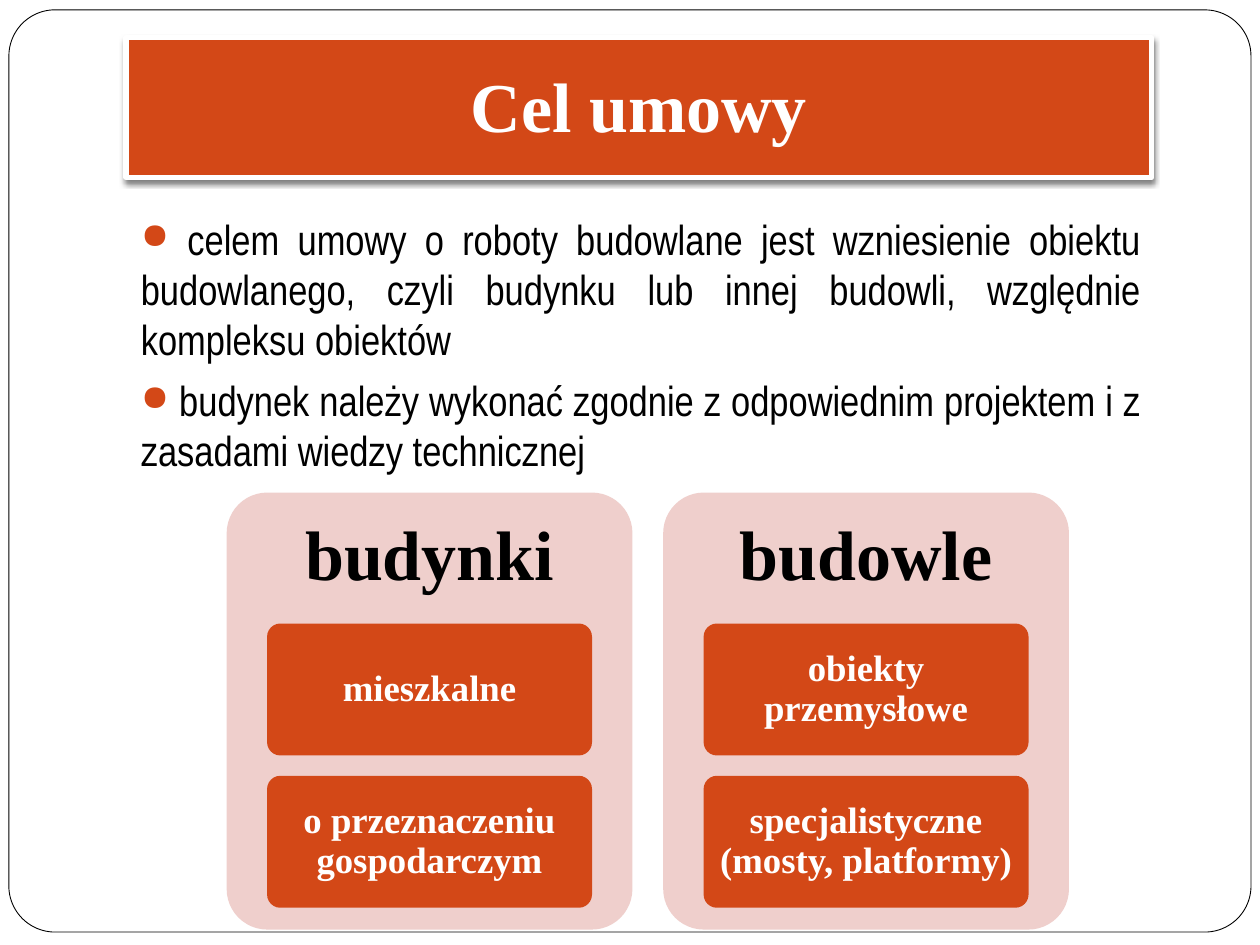
from dataclasses import dataclass

from lxml import etree
from pptx import Presentation
from pptx.dml.color import RGBColor
from pptx.enum.shapes import MSO_SHAPE
from pptx.enum.text import MSO_ANCHOR, PP_ALIGN
from pptx.oxml.ns import qn
from pptx.util import Cm, Pt

RECTANGLE = MSO_SHAPE.RECTANGLE
ROUNDED = MSO_SHAPE.ROUNDED_RECTANGLE
MIDDLE = MSO_ANCHOR.MIDDLE
CENTER = PP_ALIGN.CENTER
JUSTIFY = PP_ALIGN.JUSTIFY


@dataclass(frozen=True)
class Theme:
    accent: str = "D34817"
    panel: str = "EFCFCC"
    white: str = "FFFFFF"
    black: str = "000000"
    heading_font: str = "Times New Roman"
    body_font: str = "Arial Narrow"
    heading_size: float = 40
    body_size: float = 24
    card_size: float = 21


THEME = Theme()

BODY = [
    " celem umowy o roboty budowlane jest wzniesienie obiektu budowlanego, "
    "czyli budynku lub innej budowli, względnie kompleksu obiektów",
    " budynek należy wykonać zgodnie z odpowiednim projektem i z zasadami "
    "wiedzy technicznej",
]
GROUPS = {
    "budynki": ["mieszkalne", "o przeznaczeniu gospodarczym"],
    "budowle": ["obiekty przemysłowe", "specjalistyczne (mosty, platformy)"],
}


def style_font(paragraph, name, size, color, bold=False):
    font = paragraph.font
    font.name = name
    font.size = Pt(size)
    font.bold = bold
    font.color.rgb = RGBColor.from_string(color)


def set_margins(frame, left, top, right, bottom):
    frame.margin_left, frame.margin_top = Cm(left), Cm(top)
    frame.margin_right, frame.margin_bottom = Cm(right), Cm(bottom)


def add_box(slide, kind, box, fill, line=None, line_width=0, corner=None):
    shape = slide.shapes.add_shape(kind, *(Cm(value) for value in box))
    shape.shadow.inherit = False
    shape.fill.solid()
    shape.fill.fore_color.rgb = RGBColor.from_string(fill)
    if line:
        shape.line.color.rgb = RGBColor.from_string(line)
        shape.line.width = Pt(line_width)
    else:
        shape.line.fill.background()
    if corner is not None:
        shape.adjustments[0] = corner
    return shape


def write_centered(shape, text, size, color, margins, spacing=1.0):
    frame = shape.text_frame
    frame.word_wrap = True
    frame.vertical_anchor = MIDDLE
    set_margins(frame, *margins)
    paragraph = frame.paragraphs[0]
    paragraph.text = text
    paragraph.alignment = CENTER
    paragraph.line_spacing = spacing
    style_font(paragraph, THEME.heading_font, size, color, bold=True)


def add_shadow(shape):
    effects = shape._element.spPr.find(qn("a:effectLst"))
    shadow = etree.SubElement(
        effects, qn("a:outerShdw"), blurRad=str(Pt(3)), dist=str(Pt(2)),
        dir="5400000", algn="t", rotWithShape="0")
    color = etree.SubElement(shadow, qn("a:srgbClr"), val=THEME.black)
    etree.SubElement(color, qn("a:alpha"), val="50000")


def add_bullet(paragraph):
    properties = paragraph._p.get_or_add_pPr()
    properties.set("marL", "0")
    properties.set("indent", "0")
    color = etree.SubElement(properties, qn("a:buClr"))
    etree.SubElement(color, qn("a:srgbClr"), val=THEME.accent)
    etree.SubElement(properties, qn("a:buSzPct"), val="85000")
    etree.SubElement(properties, qn("a:buChar"), char="●")


def add_body(slide, box, texts):
    frame = slide.shapes.add_textbox(*(Cm(value) for value in box)).text_frame
    frame.word_wrap = True
    for index, text in enumerate(texts):
        paragraph = frame.add_paragraph() if index else frame.paragraphs[0]
        paragraph.text = text
        paragraph.alignment = JUSTIFY
        paragraph.space_before = Pt(5.8 if index else 0)
        add_bullet(paragraph)
        style_font(paragraph, THEME.body_font, THEME.body_size, THEME.black)


def add_title(slide, text):
    title = add_box(slide, RECTANGLE, (2.54, 0.76, 20.68, 2.82),
                    THEME.accent, THEME.white, 3)
    add_shadow(title)
    write_centered(title, text, THEME.heading_size, THEME.white,
                   (0.25, 0.13, 0.25, 0.25))


def add_group(slide, left, heading, cards):
    top, width = 9.93, 8.18
    card_width, card_height, card_pitch = 6.55, 2.66, 3.07
    add_box(slide, ROUNDED, (left, top, width, 8.81), THEME.panel, corner=0.1)
    label = slide.shapes.add_textbox(Cm(left), Cm(top), Cm(width), Cm(2.64))
    write_centered(label, heading, THEME.heading_size, THEME.black,
                   (0.43,) * 4, 0.9)
    card_left = left + (width - card_width) / 2
    for index, text in enumerate(cards):
        card_top = top + 2.64 + index * card_pitch
        card = add_box(slide, ROUNDED,
                       (card_left, card_top, card_width, card_height),
                       THEME.accent, corner=0.1)
        write_centered(card, text, THEME.card_size, THEME.white,
                       (0.15, 0.1, 0.15, 0.1), 0.9)


def main():
    presentation = Presentation()
    presentation.slide_width, presentation.slide_height = Cm(25.4), Cm(19.05)
    slide = presentation.slides.add_slide(presentation.slide_layouts[6])

    # Rounded page frame
    add_box(slide, ROUNDED, (0.18, 0.2, 25.04, 18.59), THEME.white,
            THEME.black, 0.5, corner=0.05)

    # Bulleted text and title
    add_body(slide, (2.59, 4.17, 20.65, 13.28), BODY)
    add_title(slide, "Cel umowy")

    # Two groups of cards
    for index, (heading, cards) in enumerate(GROUPS.items()):
        add_group(slide, 4.57 + index * 8.8, heading, cards)

    presentation.save("out.pptx")


if __name__ == "__main__":
    main()
